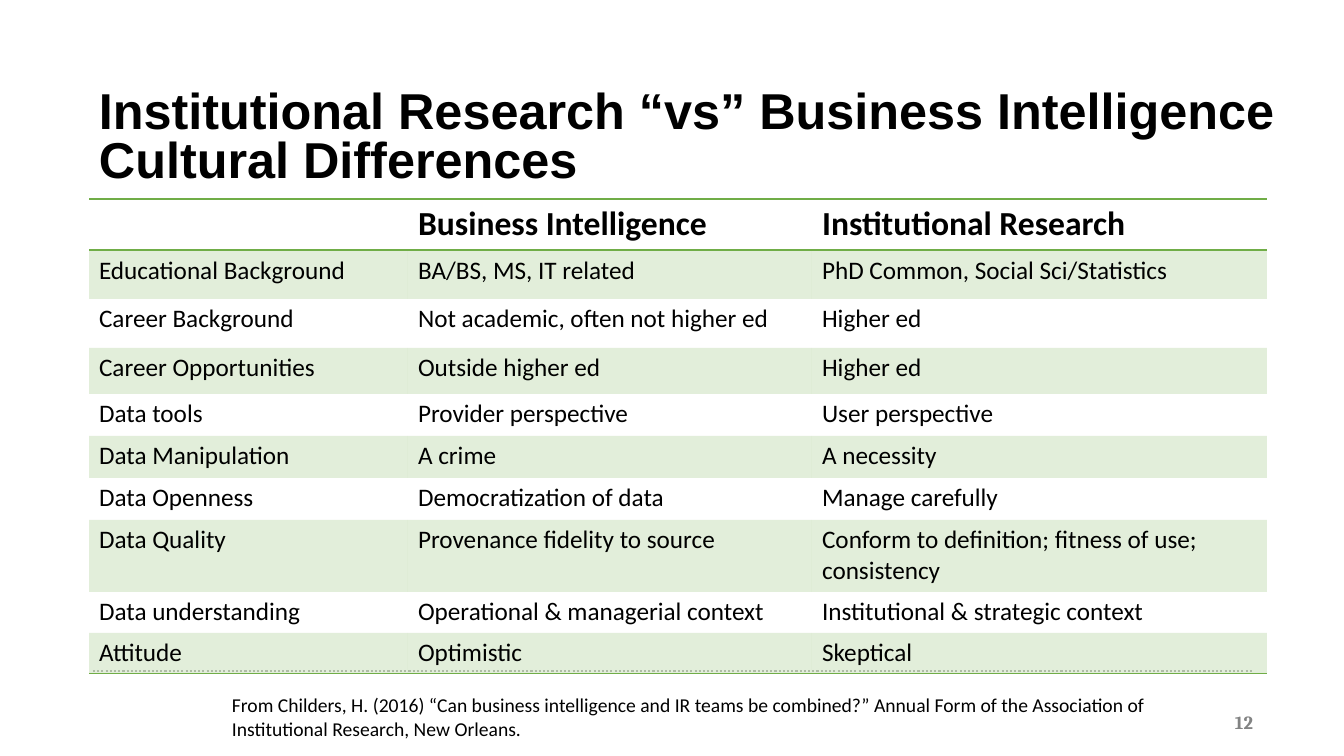
from lxml import etree
from pptx import Presentation
from pptx.dml.color import RGBColor
from pptx.enum.dml import MSO_LINE
from pptx.enum.shapes import MSO_CONNECTOR
from pptx.enum.text import MSO_ANCHOR, PP_ALIGN
from pptx.oxml.ns import qn
from pptx.util import Pt

STRAIGHT = MSO_CONNECTOR.STRAIGHT
DOTTED = MSO_LINE.ROUND_DOT
TOP, MIDDLE = MSO_ANCHOR.TOP, MSO_ANCHOR.MIDDLE
LEFT, RIGHT = PP_ALIGN.LEFT, PP_ALIGN.RIGHT
SCALE = 914400 / 100.8

THEME = {
    "black": "000000",
    "green": "70AD47",
    "rule": "C0C0C0",
    "title": {"name": "Arial", "size": Pt(36), "bold": True},
    "header": {"name": "Calibri", "size": Pt(24), "bold": True},
    "body": {"name": "Calibri", "size": Pt(18), "bold": False},
    "source": {"name": "Calibri", "size": Pt(14), "bold": False},
    "number": {"name": "Cambria", "size": Pt(13.3), "bold": True},
    "gray": "828383",
}


def px(*lengths):
    return [round(length * SCALE) for length in lengths]


def write(frame, text, style, color=THEME["black"], align=LEFT, spacing=None):
    frame.word_wrap = True
    frame.text = text
    for paragraph in frame.paragraphs:
        paragraph.alignment = align
        paragraph.line_spacing = spacing
        for part in [paragraph, *paragraph.runs]:
            for attribute, value in THEME[style].items():
                setattr(part.font, attribute, value)
            part.font.color.rgb = RGBColor.from_string(color)


prs = Presentation()
prs.slide_width, prs.slide_height = px(1344, 756)
slide = prs.slides.add_slide(prs.slide_layouts[6])

footer_rule = slide.shapes.add_connector(STRAIGHT, *px(93, 671, 1252, 671))
footer_rule.line.color.rgb = RGBColor.from_string(THEME["rule"])
footer_rule.line.width = Pt(1.5)
footer_rule.line.dash_style = DOTTED
etree.SubElement(footer_rule._element.spPr, qn("a:effectLst"))

page_number = slide.shapes.add_textbox(*px(964, 702, 302, 40)).text_frame
page_number.vertical_anchor = MIDDLE
page_number.margin_left, page_number.margin_right = px(13, 13)
write(page_number, "12", "number", THEME["gray"], RIGHT)

title = slide.shapes.add_textbox(*px(89, 86, 1206, 78)).text_frame
title.vertical_anchor = TOP
write(title, "Institutional Research “vs” Business Intelligence\vCultural Differences",
      "title", spacing=0.8)

COMPARISON = [
    ("", "Business Intelligence", "Institutional Research"),
    ("Educational Background", "BA/BS, MS, IT related", "PhD Common, Social Sci/Statistics"),
    ("Career Background", "Not academic, often not higher ed", "Higher ed"),
    ("Career Opportunities", "Outside higher ed", "Higher ed"),
    ("Data tools", "Provider perspective", "User perspective"),
    ("Data Manipulation", "A crime", "A necessity"),
    ("Data Openness", "Democratization of data", "Manage carefully"),
    ("Data Quality", "Provenance fidelity to source",
     "Conform to definition; fitness of use; consistency"),
    ("Data understanding", "Operational & managerial context",
     "Institutional & strategic context"),
    ("Attitude", "Optimistic", "Skeptical"),
]
COLUMN_WIDTHS = [319, 404, 455]
ROW_HEIGHTS = [51, 49, 49, 46, 42, 42, 42, 72, 41, 40]

comparison = slide.shapes.add_table(
    len(COMPARISON), len(COLUMN_WIDTHS),
    *px(89, 199, sum(COLUMN_WIDTHS), sum(ROW_HEIGHTS))).table
comparison.first_row = comparison.horz_banding = False
for column, width in zip(comparison.columns, px(*COLUMN_WIDTHS)):
    column.width = width
for row, height in zip(comparison.rows, px(*ROW_HEIGHTS)):
    row.height = height

last_row = len(COMPARISON) - 1
for row_index, entries in enumerate(COMPARISON):
    ruled_sides = {0: ("lnT", "lnB"), 1: ("lnT",), last_row: ("lnB",)}.get(row_index, ())
    for column_index, entry in enumerate(entries):
        cell = comparison.cell(row_index, column_index)
        write(cell.text_frame, entry, "body" if row_index else "header")
        properties = cell._tc.get_or_add_tcPr()
        for side in ("lnL", "lnR", "lnT", "lnB"):
            border = etree.SubElement(properties, qn(f"a:{side}"), w=str(Pt(1)))
            if side in ruled_sides:
                paint = etree.SubElement(border, qn("a:solidFill"))
                etree.SubElement(paint, qn("a:srgbClr"), val=THEME["green"])
            else:
                etree.SubElement(border, qn("a:noFill"))
        if row_index % 2:
            cell.fill.solid()
            cell.fill.fore_color.rgb = RGBColor.from_string(THEME["green"])
            tint = properties.find(qn("a:solidFill")).find(qn("a:srgbClr"))
            etree.SubElement(tint, qn("a:alpha"), val="20000")
        else:
            cell.fill.background()

source = slide.shapes.add_textbox(*px(222, 688, 941, 57)).text_frame
write(source, "From Childers, H. (2016) “Can business intelligence and IR teams be combined?” "
      "Annual Form of the Association of\nInstitutional Research, New Orleans.", "source")

prs.save("out.pptx")
